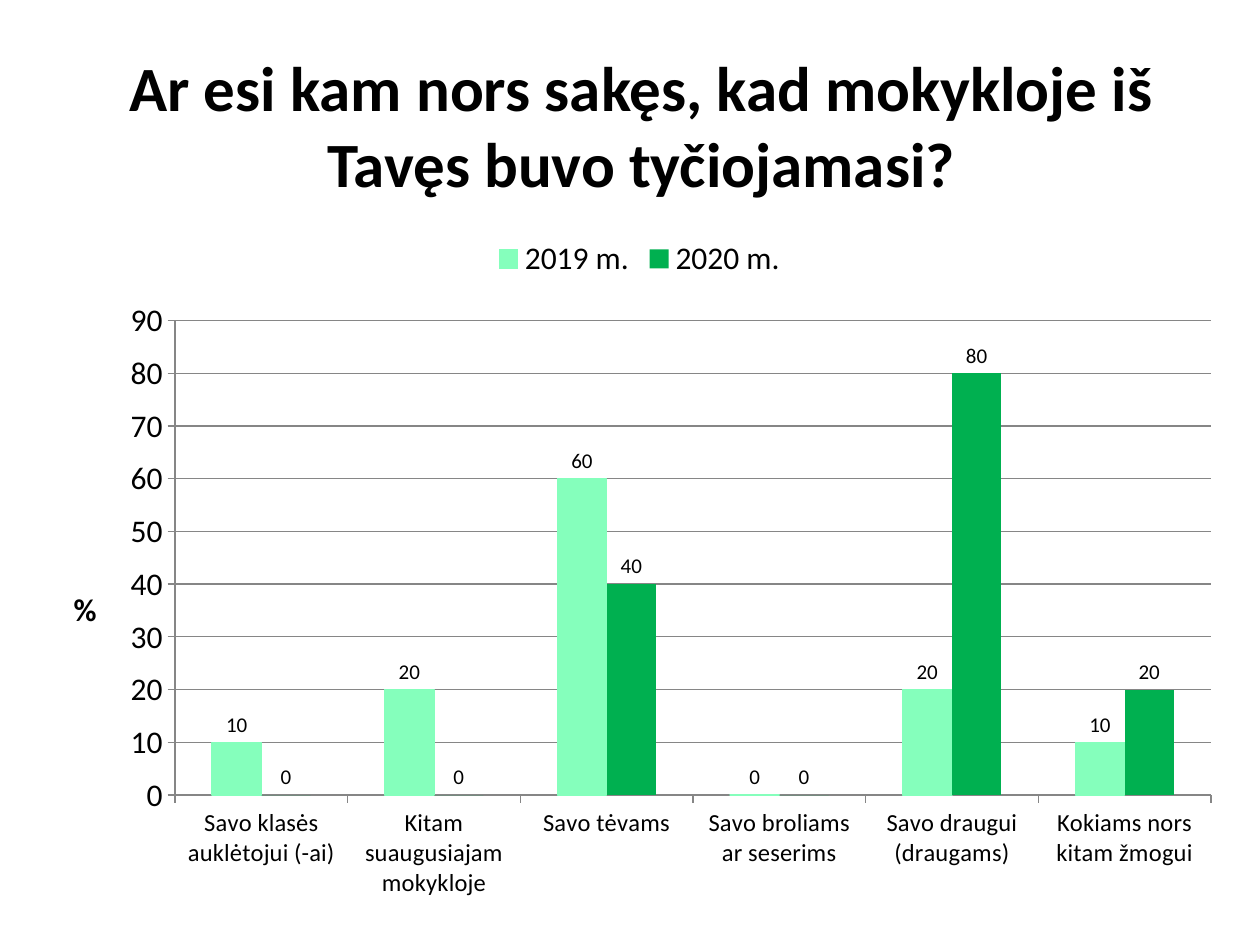
"""Build the slide with a column chart of whom pupils told about bullying."""
from dataclasses import dataclass

from lxml.etree import SubElement
from pptx import Presentation
from pptx.chart.data import CategoryChartData
from pptx.dml.color import RGBColor
from pptx.enum.chart import XL_CHART_TYPE, XL_LABEL_POSITION, XL_LEGEND_POSITION, XL_TICK_MARK
from pptx.enum.text import MSO_ANCHOR, MSO_AUTO_SIZE, PP_ALIGN
from pptx.oxml.ns import qn
from pptx.util import Inches, Pt


@dataclass(frozen=True)
class Theme:
    font: str = "Calibri"
    text: RGBColor = RGBColor(0, 0, 0)
    grid: RGBColor = RGBColor(0x86, 0x86, 0x86)
    year_2019: RGBColor = RGBColor(0x85, 0xFF, 0xBC)
    year_2020: RGBColor = RGBColor(0x00, 0xB0, 0x50)
    title_size: Pt = Pt(36)
    chart_size: Pt = Pt(18)
    category_size: Pt = Pt(14)
    label_size: Pt = Pt(12)


def style_font(font, size, bold=False):
    font.name = theme.font
    font.size = size
    font.bold = bold
    font.color.rgb = theme.text


def place_part(part, index, **settings):
    for old_layout in part.findall(qn("c:layout")):
        part.remove(old_layout)
    layout = SubElement(part, qn("c:layout"))
    part.insert(index, layout)
    manual = SubElement(layout, qn("c:manualLayout"))
    for tag, value in settings.items():
        SubElement(manual, qn(f"c:{tag}")).set("val", str(value))


theme = Theme()
prs = Presentation()
prs.slide_width = Inches(10)
prs.slide_height = Inches(7.5)
slide = prs.slides.add_slide(prs.slide_layouts[5])

title = slide.shapes.title
title.left, title.top = Inches(0.59), Inches(0.36)
title.width, title.height = Inches(9), Inches(1.25)
heading = title.text_frame
heading.word_wrap = True
heading.auto_size = MSO_AUTO_SIZE.NONE
heading.vertical_anchor = MSO_ANCHOR.MIDDLE
heading.paragraphs[0].alignment = PP_ALIGN.CENTER
question = heading.paragraphs[0].add_run()
question.text = "Ar esi kam nors sakęs, kad mokykloje iš Tavęs buvo tyčiojamasi?"
style_font(question.font, theme.title_size, bold=True)

answers = CategoryChartData()
answers.categories = [
    "Savo klasės auklėtojui (-ai)",
    "Kitam suaugusiajam mokykloje",
    "Savo tėvams",
    "Savo broliams ar seserims",
    "Savo draugui (draugams)",
    "Kokiams nors kitam žmogui",
]
answers.add_series("2019 m.", (10, 20, 60, 0, 20, 10))
answers.add_series("2020 m.", (0, 0, 40, 0, 80, 20))
chart = slide.shapes.add_chart(
    XL_CHART_TYPE.COLUMN_CLUSTERED,
    Inches(0.35), Inches(1.78), Inches(9.45), Inches(5.46), answers,
).chart
chart.has_title = False
style_font(chart.font, theme.chart_size)
chart.has_legend = True
chart.legend.position = XL_LEGEND_POSITION.TOP
chart.legend.include_in_layout = False
style_font(chart.legend.font, theme.chart_size)

plot = chart.plots[0]
plot.gap_width = 150
plot.overlap = 0
plot.vary_by_categories = False
for series, color in zip(plot.series, (theme.year_2019, theme.year_2020)):
    series.format.fill.solid()
    series.format.fill.fore_color.rgb = color
    series.invert_if_negative = False
    labels = series.data_labels
    labels.show_value = True
    labels.position = XL_LABEL_POSITION.OUTSIDE_END
    style_font(labels.font, theme.label_size)
series_2019 = plot.series[0]
series_2019.format.line.color.rgb = theme.year_2019
series_2019.format.line.width = Pt(0.75)

percent_axis = chart.value_axis
percent_axis.minimum_scale, percent_axis.maximum_scale = 0, 90
percent_axis.major_unit = 10
percent_axis.has_major_gridlines = True
percent_axis.major_gridlines.format.line.color.rgb = theme.grid
for axis, size in (
    (chart.category_axis, theme.category_size),
    (percent_axis, theme.chart_size),
):
    axis.major_tick_mark = XL_TICK_MARK.OUTSIDE
    axis.minor_tick_mark = XL_TICK_MARK.NONE
    axis.format.line.color.rgb = theme.grid
    style_font(axis.tick_labels.font, size)

percent_title = percent_axis.axis_title
percent = percent_title.text_frame.paragraphs[0].add_run()
percent.text = "%"
style_font(percent.font, theme.chart_size, bold=True)
for body in percent_title.element.xpath("c:tx/c:rich/a:bodyPr"):
    body.set("rot", "0")
    body.set("vert", "horz")

place_part(percent_title.element, 1, xMode="edge", yMode="edge", x=0.02, y=0.52)
plot_area = chart.element.xpath("c:chart/c:plotArea")[0]
place_part(
    plot_area, 0, layoutTarget="inner", xMode="edge", yMode="edge",
    x=0.11, y=0.14, w=0.87, h=0.69,
)

prs.save("out.pptx")
